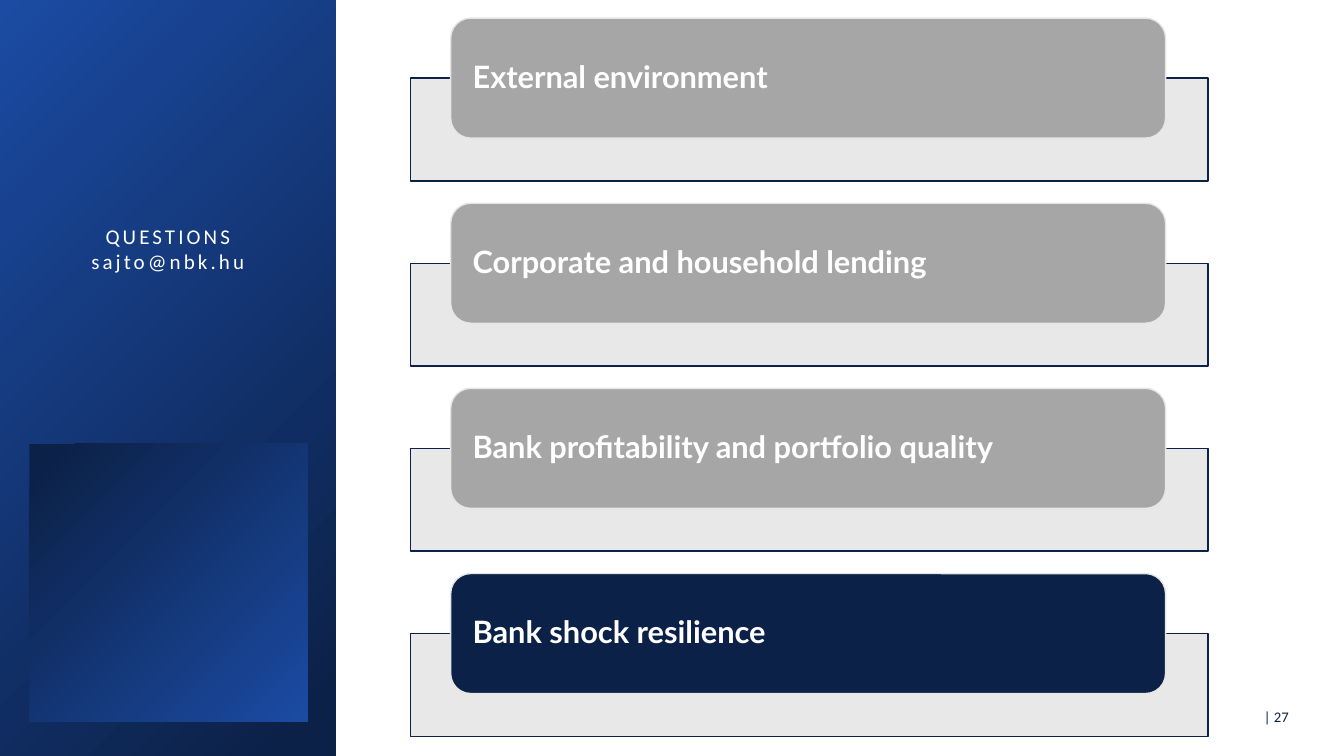
from lxml.etree import SubElement
from pptx import Presentation
from pptx.dml.color import RGBColor
from pptx.enum.shapes import MSO_SHAPE
from pptx.enum.text import MSO_ANCHOR, MSO_AUTO_SIZE, PP_ALIGN
from pptx.oxml.ns import qn
from pptx.util import Inches, Pt

TOPICS = [
    "External environment",
    "Corporate and household lending",
    "Bank profitability and portfolio quality",
    "Bank shock resilience",
]
CURRENT_TOPIC = "Bank shock resilience"
CONTACT = ["QUESTIONS", "sajto@nbk.hu"]
PAGE_NUMBER = "| 27"

COLORS = {
    "navy": "0C2148",
    "blue": "1B4BA3",
    "grey": "A6A6A6",
    "pale": "E7E6E6",
    "white": "FFFFFF",
}
FORMATS = {
    "contact": {"name": "Calibri", "size": Pt(15), "bold": False},
    "page": {"name": "Calibri", "size": Pt(10.5), "bold": False},
    "topic": {"name": "Lato", "size": Pt(22), "bold": True},
}

WIDTH, HEIGHT = 13.33, 7.5
PANEL_WIDTH = WIDTH / 4
SQUARE_SIDE = 2.76
FIRST_TOP, LAST_TOP = 0.18, 5.69
ROW_PITCH = (LAST_TOP - FIRST_TOP) / (len(TOPICS) - 1)
BAR_LEFT, BAR_WIDTH, BAR_HEIGHT = 4.07, 7.91, 1.02
CARD_LEFT, CARD_WIDTH, CARD_HEIGHT = 4.47, 7.09, 1.19
CARD_INSET = 0.22


def rgb(color):
    return RGBColor.from_string(COLORS[color])


def add_block(slide, preset, left, top, width, height):
    block = slide.shapes.add_shape(
        preset, Inches(left), Inches(top), Inches(width), Inches(height))
    block.shadow.inherit = False
    return block


def paint(block, fill, line):
    block.fill.solid()
    block.fill.fore_color.rgb = rgb(fill)
    block.line.color.rgb = rgb(line)
    block.line.width = Pt(1)


def add_gradient_block(slide, left, top, width, height):
    block = add_block(slide, MSO_SHAPE.RECTANGLE, left, top, width, height)
    block.fill.gradient()
    block.fill.gradient_angle = 135
    stops = [(0.06, "navy"), (1, "blue")]
    for stop, (position, color) in zip(block.fill.gradient_stops, stops):
        stop.position = position
        stop.color.rgb = rgb(color)
    block.line.fill.background()
    return block


def write(frame, lines, style, color, align, anchor):
    frame.word_wrap = True
    frame.auto_size = MSO_AUTO_SIZE.NONE
    frame.vertical_anchor = anchor
    frame.text = "\n".join(lines)
    for paragraph in frame.paragraphs:
        paragraph.alignment = align
        for run in paragraph.runs:
            for attribute, value in FORMATS[style].items():
                setattr(run.font, attribute, value)
            run.font.color.rgb = rgb(color)


def add_side_panel(slide):
    add_gradient_block(slide, 0, 0, PANEL_WIDTH, HEIGHT)
    square = add_gradient_block(slide, 0.29, 4.4, SQUARE_SIDE, SQUARE_SIDE)
    square.rotation = 180

    title = slide.shapes.title
    title.left, title.top = Inches(0.4), Inches(2.17)
    title.width, title.height = Inches(2.53), Inches(0.61)
    write(title.text_frame, CONTACT, "contact", "white",
          PP_ALIGN.CENTER, MSO_ANCHOR.TOP)
    for paragraph in title.text_frame.paragraphs:
        for run in paragraph.runs:
            run.font._element.set("spc", "220")
    # The title must lie above the panel
    slide.shapes.element.append(title.element)


def add_topic(slide, row, topic):
    top = FIRST_TOP + row * ROW_PITCH
    bar = add_block(slide, MSO_SHAPE.RECTANGLE, BAR_LEFT,
                    top + CARD_HEIGHT / 2, BAR_WIDTH, BAR_HEIGHT)
    paint(bar, "pale", "navy")
    fill_color = bar.element.spPr.find(qn("a:solidFill"))[0]
    SubElement(fill_color, qn("a:alpha")).set("val", "90000")

    card = add_block(slide, MSO_SHAPE.ROUNDED_RECTANGLE,
                     CARD_LEFT, top, CARD_WIDTH, CARD_HEIGHT)
    paint(card, "navy" if topic == CURRENT_TOPIC else "grey", "pale")
    frame = card.text_frame
    write(frame, [topic], "topic", "white", PP_ALIGN.LEFT, MSO_ANCHOR.MIDDLE)
    frame.paragraphs[0].line_spacing = 0.9
    frame.margin_left = frame.margin_right = Inches(CARD_INSET - 0.06)
    frame.margin_top = frame.margin_bottom = 0


def main():
    presentation = Presentation()
    presentation.slide_width = Inches(WIDTH)
    presentation.slide_height = Inches(HEIGHT)
    slide = presentation.slides.add_slide(presentation.slide_layouts[5])

    add_side_panel(slide)
    page = slide.shapes.add_textbox(
        Inches(12.19), Inches(6.9), Inches(0.69), Inches(0.41))
    write(page.text_frame, [PAGE_NUMBER], "page", "navy",
          PP_ALIGN.RIGHT, MSO_ANCHOR.MIDDLE)
    for row, topic in enumerate(TOPICS):
        add_topic(slide, row, topic)

    presentation.save("out.pptx")


if __name__ == "__main__":
    main()
